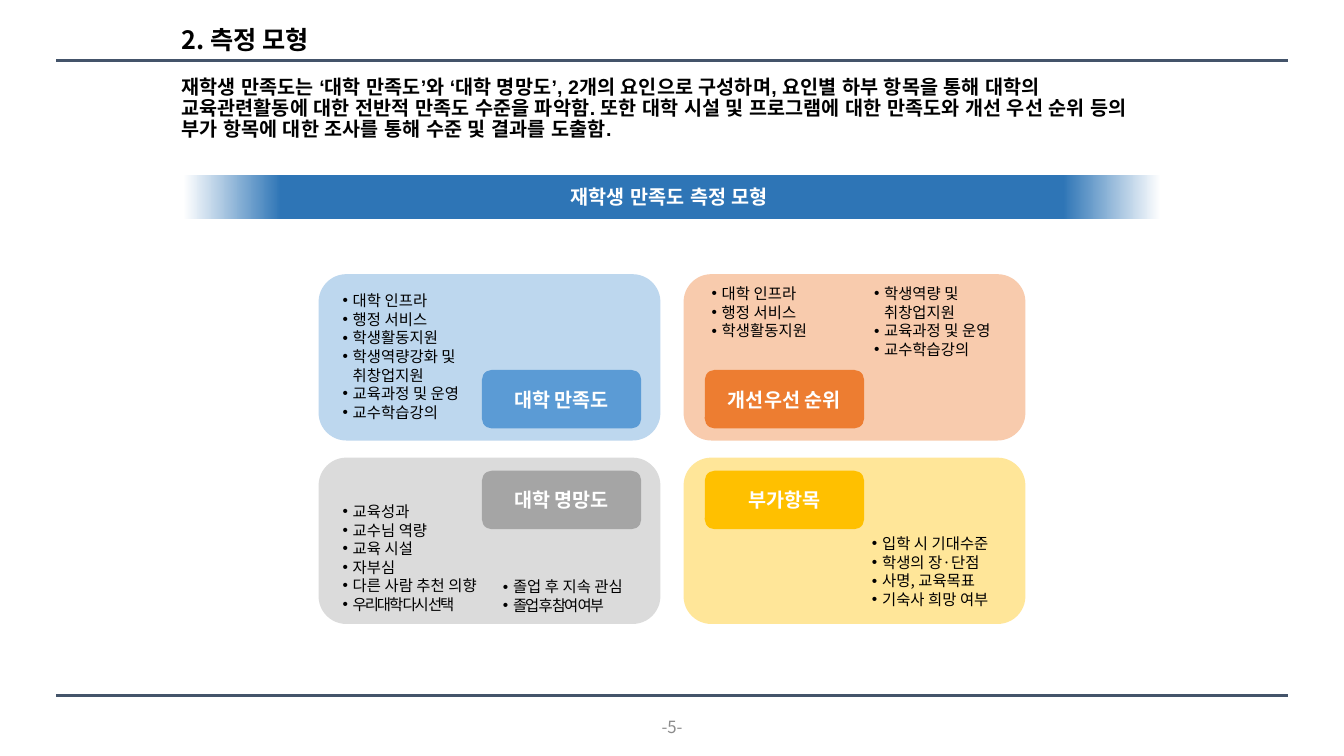
from dataclasses import dataclass

from lxml.etree import SubElement
from pptx import Presentation
from pptx.dml.color import RGBColor
from pptx.enum.shapes import MSO_CONNECTOR, MSO_SHAPE
from pptx.enum.text import MSO_ANCHOR, PP_ALIGN
from pptx.oxml.ns import qn
from pptx.util import Inches, Pt


@dataclass(frozen=True)
class Theme:
    korean: str = "Noto Sans CJK KR"
    latin: str = "Arial"
    black: str = "000000"
    white: str = "FFFFFF"
    rule: str = "44546A"
    page: str = "8C8C8C"
    banner: str = "2E75B6"
    title_size: float = 18
    body_size: float = 14
    page_size: float = 12
    list_size: float = 11
    body_pitch: float = 15
    list_pitch: float = 13.3


THEME = Theme()

INTRO = (
    "재학생 만족도는 ‘대학 만족도’와 ‘대학 명망도’, 2개의 요인으로 구성하며, "
    "요인별 하부 항목을 통해 대학의 교육관련활동에 대한 전반적 만족도 수준을 파악함. "
    "또한 대학 시설 및 프로그램에 대한 만족도와 개선 우선 순위 등의 "
    "부가 항목에 대한 조사를 통해 수준 및 결과를 도출함."
)

# Label, panel colour, label colour; row by row
FACTORS = [
    ("대학 만족도", "BDD7EE", "5B9BD5"),
    ("개선우선 순위", "F8CBAD", "ED7D31"),
    ("대학 명망도", "DBDBDB", "A5A5A5"),
    ("부가항목", "FFE699", "FFC000"),
]
PANEL_LEFTS, PANEL_TOPS = (3.16, 6.78), (2.72, 4.54)
LABEL_LEFTS, LABEL_TOPS = (4.78, 6.99), (3.67, 4.67)

# Left, top, width, height, items
ITEM_LISTS = [
    (3.3, 2.84, 1.51, 1.4, ["대학 인프라", "행정 서비스", "학생활동지원",
                            "학생역량강화 및 취창업지원", "교육과정 및 운영", "교수학습강의"]),
    (6.96, 2.77, 1.71, 0.66, ["대학 인프라", "행정 서비스", "학생활동지원"]),
    (8.57, 2.77, 1.51, 0.84, ["학생역량 및 취창업지원", "교육과정 및 운영", "교수학습강의"]),
    (3.3, 4.93, 1.76, 1.21, ["교육성과", "교수님 역량", "교육 시설", "자부심",
                             "다른 사람 추천 의향", "우리대학 다시 선택"]),
    (4.89, 5.68, 1.64, 0.47, ["졸업 후 지속 관심", "졸업 후 참여 여부"]),
    (8.55, 5.25, 1.51, 0.85, ["입학 시 기대수준", "학생의 장·단점",
                              "사명, 교육목표", "기숙사 희망 여부"]),
]
TIGHT_ITEMS = {"우리대학 다시 선택", "졸업 후 참여 여부"}


def write(paragraph, text, size, color, bold=False, font=THEME.korean):
    run = paragraph.add_run()
    run.text = text
    # Paragraph defaults and run settings agree
    for target in (paragraph.font, run.font):
        target.size = Pt(size)
        target.bold = bold
        target.name = font
        target.color.rgb = RGBColor.from_string(color)
    for holder in (paragraph._p.pPr.find(qn("a:defRPr")), run._r.rPr):
        SubElement(holder, qn("a:ea"), typeface=font)
    return run


def add_text(slide, box, anchor=MSO_ANCHOR.TOP, wrap=True):
    frame = slide.shapes.add_textbox(*map(Inches, box)).text_frame
    frame.word_wrap = wrap
    frame.vertical_anchor = anchor
    return frame


def add_rule(slide, top):
    rule = slide.shapes.add_connector(
        MSO_CONNECTOR.STRAIGHT, Inches(0.56), Inches(top), Inches(12.77), Inches(top))
    rule.line.color.rgb = RGBColor.from_string(THEME.rule)
    rule.line.width = Pt(2)
    SubElement(rule._element.spPr, qn("a:effectLst"))


def add_block(slide, kind, box, fill, label=None, font=THEME.korean):
    block = slide.shapes.add_shape(kind, *map(Inches, box))
    block.shadow.inherit = False
    block.line.fill.background()
    block.fill.solid()
    block.fill.fore_color.rgb = RGBColor.from_string(fill)
    if label:
        frame = block.text_frame
        frame.vertical_anchor = MSO_ANCHOR.MIDDLE
        frame.paragraphs[0].alignment = PP_ALIGN.CENTER
        write(frame.paragraphs[0], label, THEME.body_size, THEME.white, True, font)
    return block


def fade_sides(block, color):
    block.fill.gradient()
    block.fill.gradient_angle = 0
    stops = block._element.spPr.find(qn("a:gradFill")).find(qn("a:gsLst"))
    for stop in list(stops):
        stops.remove(stop)
    for percent, shade in ((0, THEME.white), (10, color), (90, color), (100, THEME.white)):
        stop = SubElement(stops, qn("a:gs"), pos=str(percent * 1000))
        SubElement(stop, qn("a:srgbClr"), val=shade)


def add_items(slide, box, items):
    frame = add_text(slide, box)
    for index, item in enumerate(items):
        paragraph = frame.add_paragraph() if index else frame.paragraphs[0]
        paragraph.line_spacing = Pt(THEME.list_pitch)
        properties = paragraph._p.get_or_add_pPr()
        properties.set("marL", str(Inches(0.1)))
        properties.set("indent", str(-Inches(0.1)))
        SubElement(properties, qn("a:buFont"), typeface=THEME.latin)
        SubElement(properties, qn("a:buChar"), char="•")
        run = write(paragraph, item, THEME.list_size, THEME.black)
        if item in TIGHT_ITEMS:
            run._r.rPr.set("spc", "-150")


def main():
    deck = Presentation()
    deck.slide_width, deck.slide_height = Inches(13.33), Inches(7.5)
    slide = deck.slides.add_slide(deck.slide_layouts[6])

    # Heading, introduction and page number
    for top in (0.6, 6.9):
        add_rule(slide, top)
    heading = add_text(slide, (1.7, 0.21, 1.6, 0.37), MSO_ANCHOR.MIDDLE, wrap=False)
    write(heading.paragraphs[0], "2. 측정 모형", THEME.title_size, THEME.black, True)
    intro = add_text(slide, (1.7, 0.72, 9.92, 0.74)).paragraphs[0]
    intro.line_spacing = Pt(THEME.body_pitch)
    write(intro, INTRO, THEME.body_size, THEME.black, True, THEME.latin)
    page = add_text(slide, (6.39, 7.06, 0.55, 0.3), MSO_ANCHOR.MIDDLE, wrap=False).paragraphs[0]
    page.alignment = PP_ALIGN.CENTER
    write(page, "-5-", THEME.page_size, THEME.page)

    # Banner
    banner = add_block(slide, MSO_SHAPE.RECTANGLE, (1.82, 1.74, 9.69, 0.43),
                       THEME.banner, "재학생 만족도 측정 모형 ", THEME.latin)
    fade_sides(banner, THEME.banner)

    # Four factor panels with their labels
    for index, (label, panel_color, label_color) in enumerate(FACTORS):
        row, column = divmod(index, 2)
        add_block(slide, MSO_SHAPE.ROUNDED_RECTANGLE,
                  (PANEL_LEFTS[column], PANEL_TOPS[row], 3.39, 1.65), panel_color)
        add_block(slide, MSO_SHAPE.ROUNDED_RECTANGLE,
                  (LABEL_LEFTS[column], LABEL_TOPS[row], 1.58, 0.58), label_color, label)

    # Survey items
    for *box, items in ITEM_LISTS:
        add_items(slide, box, items)

    deck.save("out.pptx")


if __name__ == "__main__":
    main()
